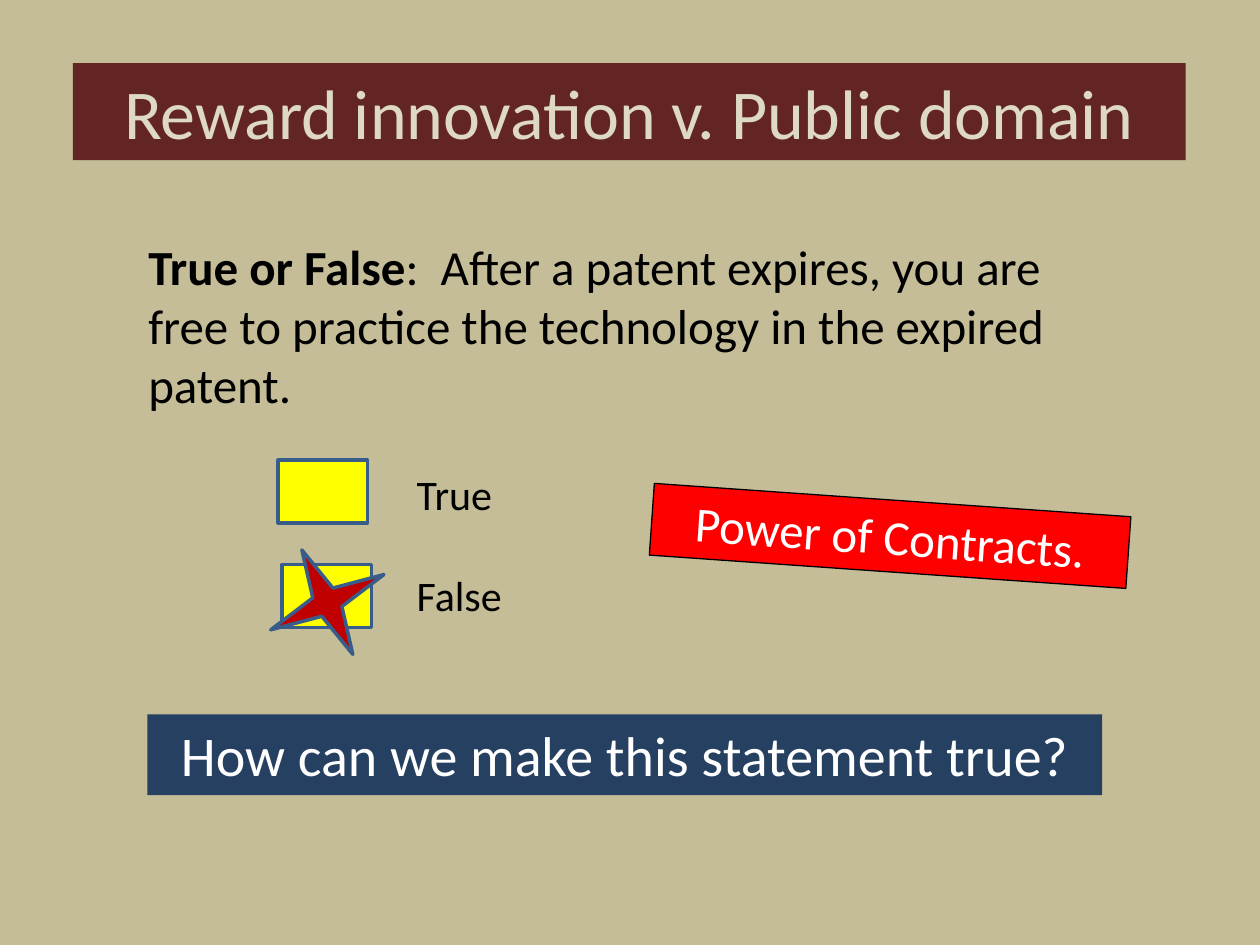
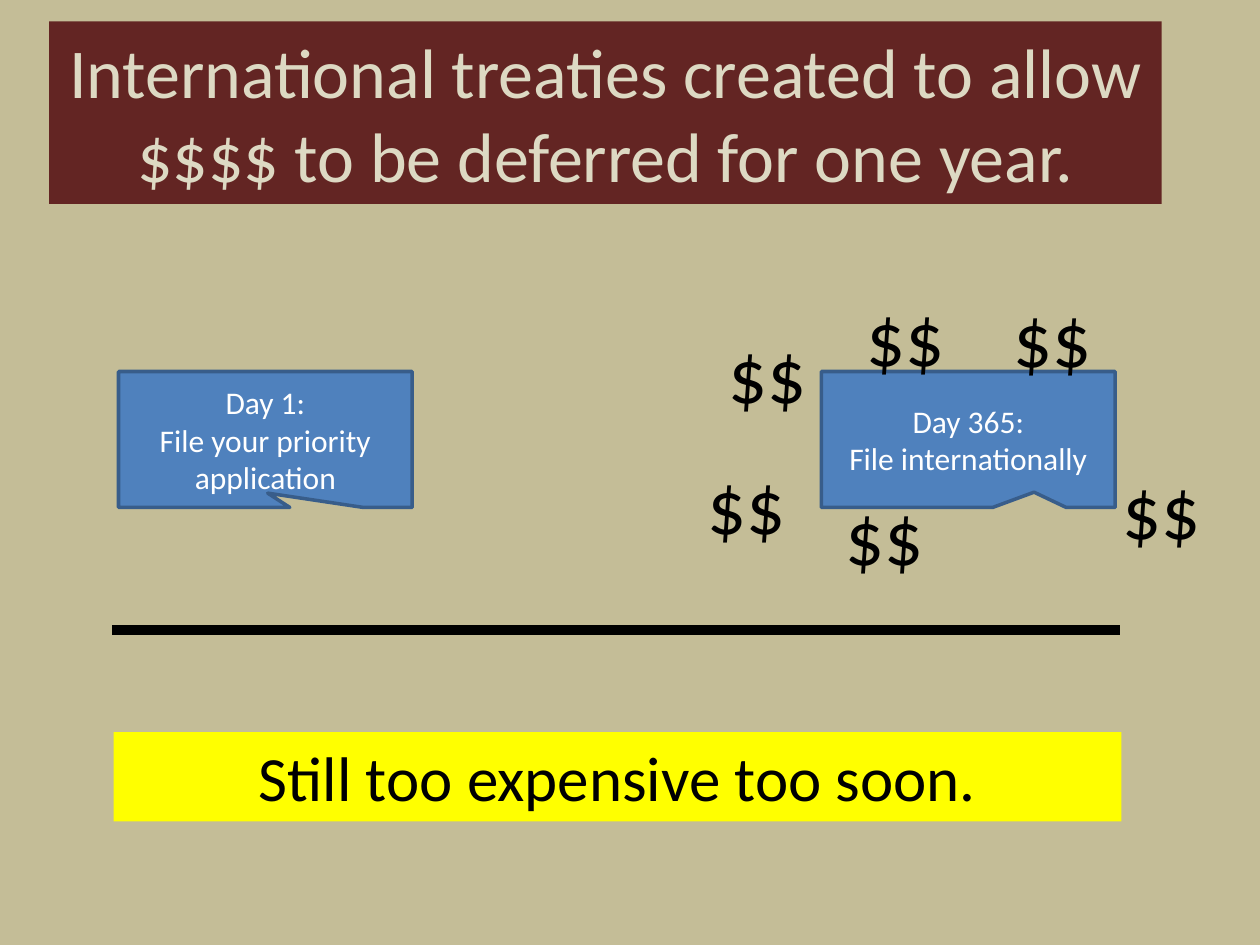
from dataclasses import dataclass

import pptx
import pptx.dml.color
import pptx.enum.shapes
import pptx.enum.text
import pptx.oxml.ns
import pptx.util
from lxml import etree

Cm = pptx.util.Cm
Pt = pptx.util.Pt
Kind = pptx.enum.shapes.MSO_SHAPE
Align = pptx.enum.text.PP_ALIGN
Anchor = pptx.enum.text.MSO_ANCHOR


@dataclass(frozen=True)
class Theme:
    font: str = "Calibri"
    sand: str = "C4BD97"
    maroon: str = "632523"
    cream: str = "DDD9C3"
    yellow: str = "FFFF00"
    red: str = "FF0000"
    dark_red: str = "C00000"
    navy: str = "254061"
    blue: str = "4F81BD"
    outline: str = "385D8A"
    black: str = "000000"
    white: str = "FFFFFF"
    title_size: int = 40
    money_size: int = 44
    verdict_size: int = 36
    prompt_size: int = 32
    body_size: int = 28
    answer_size: int = 24
    callout_size: int = 18
    outline_width: float = 2
    timeline_width: float = 6


THEME = Theme()


@dataclass(frozen=True)
class Box:
    """Left, top, width and height in centimetres."""
    left: float
    top: float
    width: float
    height: float

    def lengths(self) -> tuple:
        return Cm(self.left), Cm(self.top), Cm(self.width), Cm(self.height)


@dataclass(frozen=True)
class Block:
    """A filled shape, with or without an outline and centred text."""
    box: Box
    fill: str
    text: str = ""
    size: int = THEME.body_size
    color: str = THEME.white
    kind: Kind = Kind.RECTANGLE
    line: str = ""
    line_width: float = THEME.outline_width
    rotation: float = 0
    adjustments: tuple = ()
    anchor: Anchor = Anchor.TOP


def rgb(color: str) -> pptx.dml.color.RGBColor:
    return pptx.dml.color.RGBColor.from_string(color)


def paint(shape, color: str) -> None:
    shape.fill.solid()
    shape.fill.fore_color.rgb = rgb(color)


def write(frame, text: str, size: int, color: str, align: Align = Align.CENTER,
          anchor: Anchor = Anchor.TOP) -> None:
    frame.text = text
    frame.word_wrap = True
    frame.auto_size = pptx.enum.text.MSO_AUTO_SIZE.NONE
    frame.vertical_anchor = anchor
    for paragraph in frame.paragraphs:
        paragraph.alignment = align
        for run in paragraph.runs:
            run.font.name = THEME.font
            run.font.size = Pt(size)
            run.font.color.rgb = rgb(color)


def add_titled_slide(deck, title: str, box: Box):
    slide = deck.slides.add_slide(deck.slide_layouts.get_by_name("Title Only"))
    band = slide.shapes.title
    band.left, band.top, band.width, band.height = box.lengths()
    paint(band, THEME.maroon)
    write(band.text_frame, title, THEME.title_size, THEME.cream, anchor=Anchor.MIDDLE)
    return slide


def add_block(slide, block: Block) -> None:
    shape = slide.shapes.add_shape(block.kind, *block.box.lengths())
    shape.shadow.inherit = False
    shape.rotation = block.rotation
    for index, value in enumerate(block.adjustments):
        shape.adjustments[index] = value
    paint(shape, block.fill)
    if block.line:
        shape.line.color.rgb = rgb(block.line)
        shape.line.width = Pt(block.line_width)
    else:
        shape.line.fill.background()
    if block.text:
        write(shape.text_frame, block.text, block.size, block.color, anchor=block.anchor)


def add_text(slide, box: Box, text: str, size: int, align: Align = Align.LEFT):
    frame = slide.shapes.add_textbox(*box.lengths()).text_frame
    write(frame, text, size, THEME.black, align)
    return frame


def add_timeline(slide, left: float, right: float, top: float) -> None:
    timeline = slide.shapes.add_connector(
        pptx.enum.shapes.MSO_CONNECTOR.STRAIGHT, Cm(left), Cm(top), Cm(right), Cm(top))
    timeline.line.color.rgb = rgb(THEME.black)
    timeline.line.width = Pt(THEME.timeline_width)
    etree.SubElement(timeline._element.spPr, pptx.oxml.ns.qn("a:effectLst"))


def checkbox(left: float, top: float) -> Block:
    return Block(Box(left, top, 1.8, 1.27), THEME.yellow, line=THEME.outline)


def filing_callout(left: float, text: str, tip: tuple) -> Block:
    return Block(Box(left, 7.49, 5.92, 2.74), THEME.blue, text, THEME.callout_size,
                 kind=Kind.ROUNDED_RECTANGULAR_CALLOUT, line=THEME.outline,
                 adjustments=(*tip, 0), anchor=Anchor.MIDDLE)


def build_true_or_false(deck) -> None:
    slide = add_titled_slide(deck, "Reward innovation v. Public domain",
                             Box(1.47, 1.27, 22.43, 1.96))

    lead = "True or False"
    statement = (":  After a patent expires, you are free to practice "
                 "the technology in the expired patent.")
    question = add_text(slide, Box(2.74, 4.65, 19.68, 3.84), lead, THEME.body_size)
    paragraph = question.paragraphs[0]
    paragraph.add_run().text = statement
    lead_run, statement_run = paragraph.runs
    statement_run.font.name = THEME.font
    statement_run.font.size = Pt(THEME.body_size)
    statement_run.font.color.rgb = rgb(THEME.black)
    lead_run.font.bold = True

    answers = add_text(slide, Box(8.15, 9.32, 9.09, 3.33), "True\nFalse", THEME.answer_size)
    answers.paragraphs[1].space_before = Pt(29)

    blocks = (
        checkbox(5.69, 11.38),
        checkbox(5.61, 9.27),
        Block(Box(5.33, 10.97, 2.54, 2.34), THEME.dark_red, kind=Kind.STAR_4_POINT,
              line=THEME.outline, rotation=334, adjustments=(0.125,)),
        Block(Box(13.13, 10.08, 9.63, 1.45), THEME.red, "Power of Contracts.",
              line=THEME.black, line_width=0.75, rotation=4),
        Block(Box(2.97, 14.4, 19.25, 1.63), THEME.navy,
              "How can we make this statement true?", THEME.prompt_size),
    )
    for block in blocks:
        add_block(slide, block)


def build_treaties(deck) -> None:
    slide = add_titled_slide(
        deck, "International treaties created to allow $$$$ to be deferred for one year.",
        Box(0.99, 0.43, 22.43, 3.68))
    add_timeline(slide, 2.26, 22.58, 12.7)

    blocks = (
        filing_callout(2.39, "Day 1:\nFile your priority application", (0.008, 0.395)),
        filing_callout(16.56, "Day 365:\nFile internationally", (0.224, 0.388)),
        Block(Box(2.29, 14.76, 20.32, 1.8), THEME.yellow, "Still too expensive too soon.",
              THEME.verdict_size, THEME.black),
    )
    for block in blocks:
        add_block(slide, block)

    costs = ((16.89, 5.72), (16.46, 9.73), (13.69, 9.09),
             (22.05, 9.19), (14.1, 6.45), (19.84, 5.74))
    for left, top in costs:
        add_text(slide, Box(left, top, 2.74, 2.13), "$$", THEME.money_size, Align.CENTER)


def main() -> None:
    deck = pptx.Presentation()
    deck.slide_width, deck.slide_height = Cm(25.4), Cm(19.05)
    paint(deck.slide_master.background, THEME.sand)
    build_true_or_false(deck)
    build_treaties(deck)
    deck.save("out.pptx")


if __name__ == "__main__":
    main()
